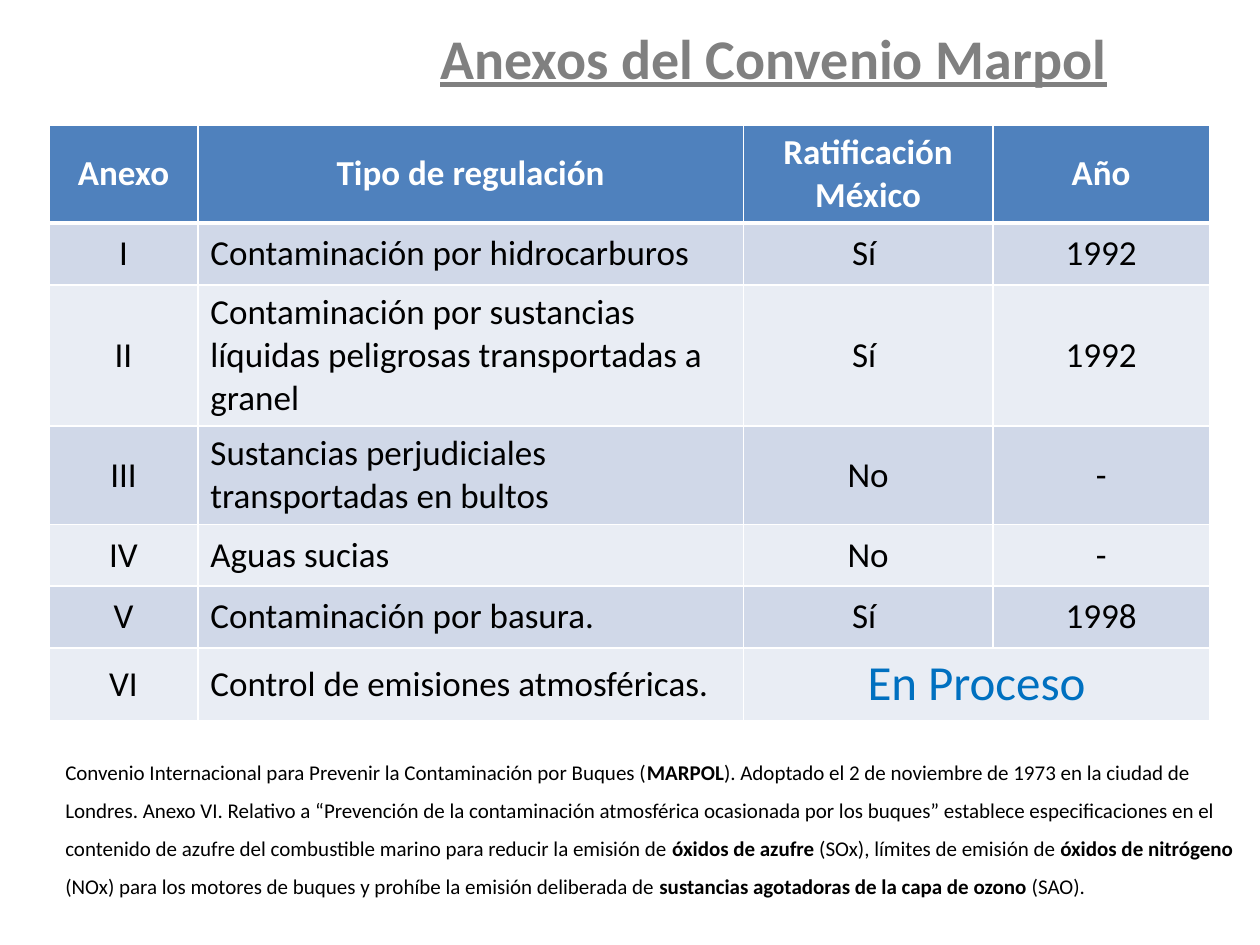
from typing import NamedTuple

from lxml.etree import SubElement
from pptx import Presentation
from pptx.dml.color import RGBColor
from pptx.enum.text import MSO_ANCHOR, PP_ALIGN
from pptx.oxml.ns import qn
from pptx.util import Inches, Pt

WHITE = RGBColor(0xFF, 0xFF, 0xFF)
BLACK = RGBColor(0x00, 0x00, 0x00)
GRAY = RGBColor(0x80, 0x80, 0x80)
BLUE = RGBColor(0x00, 0x70, 0xC0)
HEADER_FILL = RGBColor(0x4F, 0x81, 0xBD)
BAND_FILLS = (RGBColor(0xE9, 0xED, 0xF4), RGBColor(0xD0, 0xD8, 0xE8))
FONT = "Calibri"
COLUMN_WIDTHS = (1.18, 4.33, 1.98, 1.72)
ROW_HEIGHTS = (0.76, 0.49, 0.76, 0.76, 0.49, 0.49, 0.49)


class Annex(NamedTuple):
    number: str
    regulation: str
    ratified: str
    year: str


HEADER = Annex("Anexo", "Tipo de regulación", "Ratificación México", "Año")
ANNEXES = (
    Annex("I", "Contaminación por hidrocarburos", "Sí ", "1992"),
    Annex("II", "Contaminación por sustancias líquidas peligrosas transportadas a granel", "Sí ", "1992"),
    Annex("III", "Sustancias perjudiciales transportadas en bultos", "No", "-"),
    Annex("IV", "Aguas sucias", "No", "-"),
    Annex("V", "Contaminación por basura.", "Sí ", "1998"),
    Annex("VI", "Control de emisiones atmosféricas.", "En Proceso", ""),
)
NOTE_SPANS = (
    ("Convenio Internacional para Prevenir la Contaminación por Buques (", False),
    ("MARPOL", True),
    ("). Adoptado el 2 de noviembre de 1973 en la ciudad de Londres. Anexo VI. "
     "Relativo a “Prevención de la contaminación atmosférica ocasionada por los buques” "
     "establece especificaciones en el contenido de azufre del combustible marino "
     "para reducir la emisión de ", False),
    ("óxidos de azufre", True),
    (" (SOx), límites de emisión de ", False),
    ("óxidos de nitrógeno ", True),
    ("(NOx) para los motores de buques y prohíbe la emisión deliberada de ", False),
    ("sustancias agotadoras de la capa de ozono", True),
    (" (SAO).", False),
)


def add_span(para, text: str, *, size=20, color=BLACK, bold=False, underline=False) -> None:
    span = para.add_run()
    span.text = text
    font = span.font
    font.name, font.size, font.bold = FONT, Pt(size), bold
    font.underline = underline
    font.color.rgb = color


def set_borders(cell, bottom_width: float) -> None:
    properties = cell._tc.get_or_add_tcPr()
    for side in "LRTB":
        width = bottom_width if side == "B" else 1
        line = SubElement(properties, qn(f"a:ln{side}"), w=str(Pt(width)))
        fill = SubElement(line, qn("a:solidFill"))
        SubElement(fill, qn("a:srgbClr"), val=str(WHITE))


def add_annex_table(page) -> None:
    rows = (HEADER, *ANNEXES)
    frame = page.shapes.add_table(
        len(rows), len(COLUMN_WIDTHS), Inches(0.39), Inches(0.99),
        Inches(sum(COLUMN_WIDTHS)), Inches(sum(ROW_HEIGHTS)),
    )
    table = frame.table
    table.first_row = table.horz_banding = False
    for column, width in zip(table.columns, COLUMN_WIDTHS):
        column.width = Inches(width)
    for row, height in zip(table.rows, ROW_HEIGHTS):
        row.height = Inches(height)
    table.cell(len(ANNEXES), 2).merge(table.cell(len(ANNEXES), 3))

    for row_index, annex in enumerate(rows):
        is_header = row_index == 0
        for column_index, text in enumerate(annex):
            cell = table.cell(row_index, column_index)
            set_borders(cell, 3 if is_header else 1)
            cell.fill.solid()
            cell.fill.fore_color.rgb = HEADER_FILL if is_header else BAND_FILLS[row_index % 2]
            cell.vertical_anchor = MSO_ANCHOR.MIDDLE
            if cell.is_spanned:
                continue
            para = cell.text_frame.paragraphs[0]
            is_description = column_index == 1 and not is_header
            para.alignment = PP_ALIGN.LEFT if is_description else PP_ALIGN.CENTER
            if cell.is_merge_origin:
                add_span(para, text, size=28, color=BLUE)
            else:
                add_span(para, text, color=WHITE if is_header else BLACK, bold=is_header)


def add_title(page) -> None:
    box = page.shapes.add_textbox(Inches(3.37), Inches(0.13), Inches(5.54), Inches(0.64))
    box.text_frame.word_wrap = False
    box.text_frame.vertical_anchor = MSO_ANCHOR.MIDDLE
    para = box.text_frame.paragraphs[0]
    para.alignment = PP_ALIGN.CENTER
    add_span(para, "Anexos del Convenio Marpol", size=32, color=GRAY, bold=True, underline=True)


def add_note(page) -> None:
    box = page.shapes.add_textbox(Inches(0.42), Inches(5.88), Inches(9.53), Inches(1.31))
    box.text_frame.word_wrap = True
    para = box.text_frame.paragraphs[0]
    para.line_spacing = 1.5
    for text, bold in NOTE_SPANS:
        add_span(para, text, size=12, bold=bold)


def main() -> None:
    deck = Presentation()
    deck.slide_width, deck.slide_height = Inches(10), Inches(7.5)
    page = deck.slides.add_slide(deck.slide_layouts[6])
    add_annex_table(page)
    add_note(page)
    add_title(page)
    deck.save("out.pptx")


if __name__ == "__main__":
    main()
